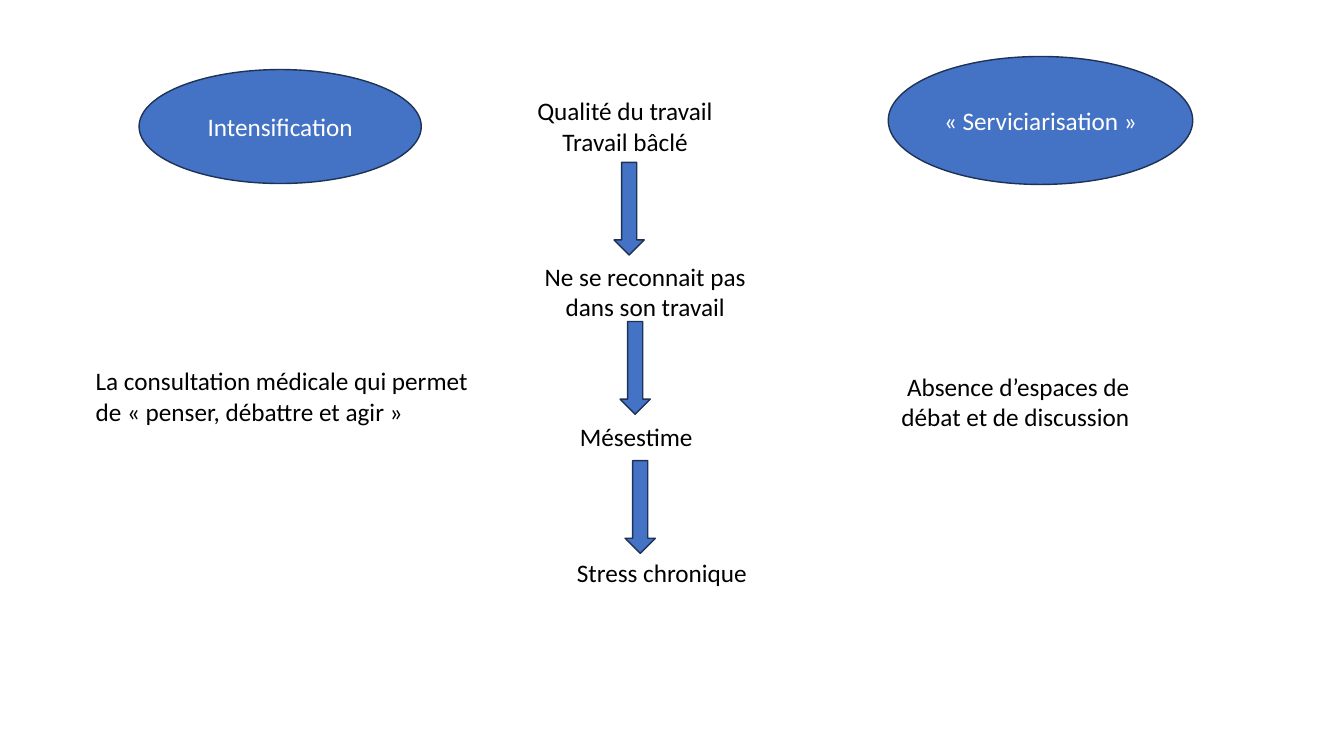
from pptx import Presentation, util as u
from pptx.dml.color import RGBColor
from pptx.enum import shapes, text

THEME = {
    "font": "Calibri",
    "size": u.Pt(18),
    "ink": RGBColor.from_string("000000"),
    "pale": RGBColor.from_string("FFFFFF"),
    "fill": RGBColor.from_string("4472C4"),
    "edge": RGBColor.from_string("1E3256"),
    "rule": u.Pt(1),
}
MID, LEFT = text.PP_ALIGN.CENTER, text.PP_ALIGN.LEFT
ONE, TWO = 5.33, 9.47  # heights of one and two lines of text

deck = Presentation()
deck.slide_width, deck.slide_height = u.Inches(13.33), u.Inches(7.5)
slide = deck.slides.add_slide(deck.slide_layouts[6])


def place(x, y, w, h):
    """Turn percent shares of the slide into lengths."""
    wide, high = deck.slide_width / 100, deck.slide_height / 100
    return [int(v) for v in (x * wide, y * high, w * wide, h * high)]


def write(shape, lines, color, align=MID, wrap=True):
    frame = shape.text_frame
    frame.word_wrap = wrap
    frame.text = "\n".join(lines)
    for para in frame.paragraphs:
        para.alignment = align
        font = para.runs[0].font
        for key, val in {"name": THEME["font"], "size": THEME["size"]}.items():
            setattr(font, key, val)
        font.color.rgb = color


# Labels: lines, box in percent, alignment, wrap
labels = [
    (["Qualité du travail", "Travail bâclé"], (38.18, 12, 16.65, TWO), MID, True),
    (["Ne se reconnait pas dans son travail"], (39.68, 33.87, 16.65, TWO), MID, True),
    (["Mésestime"], (42.16, 55.07, 10.35, ONE), MID, True),
    (["Absence d’espaces de débat et de discussion "], (66.09, 48.4, 19.35, TWO), MID, True),
    (["Stress chronique"], (38.18, 73.07, 22.13, ONE), MID, True),
    (["La consultation médicale qui permet", "de « penser, débattre et agir »"],
     (6.38, 47.73, 30, TWO), LEFT, False),
]
for lines, box, align, wrap in labels:
    label = slide.shapes.add_textbox(*place(*box))
    write(label, lines, THEME["ink"], align, wrap)
    label.text_frame.auto_size = text.MSO_AUTO_SIZE.SHAPE_TO_FIT_TEXT

# Arrows down the chain, then the two causes
arrow, oval = shapes.MSO_SHAPE.DOWN_ARROW, shapes.MSO_SHAPE.OVAL
steps = [(45.69, 21.47), (46.14, 42.53), (46.51, 60.93)]
forms = [(arrow, (x, y, 2.25, 12.27), None) for x, y in steps]
forms += [
    (oval, (10.35, 9.2, 21, 15.07), "Intensification"),
    (oval, (66.09, 7.47, 22.66, 16.93), "« Serviciarisation »"),
]
for kind, box, words in forms:
    form = slide.shapes.add_shape(kind, *place(*box))
    form.shadow.inherit = False
    form.fill.solid()
    form.fill.fore_color.rgb = THEME["fill"]
    form.line.color.rgb = THEME["edge"]
    form.line.width = THEME["rule"]
    if words:
        write(form, [words], THEME["pale"])
        form.text_frame.vertical_anchor = text.MSO_ANCHOR.MIDDLE

deck.save("out.pptx")
